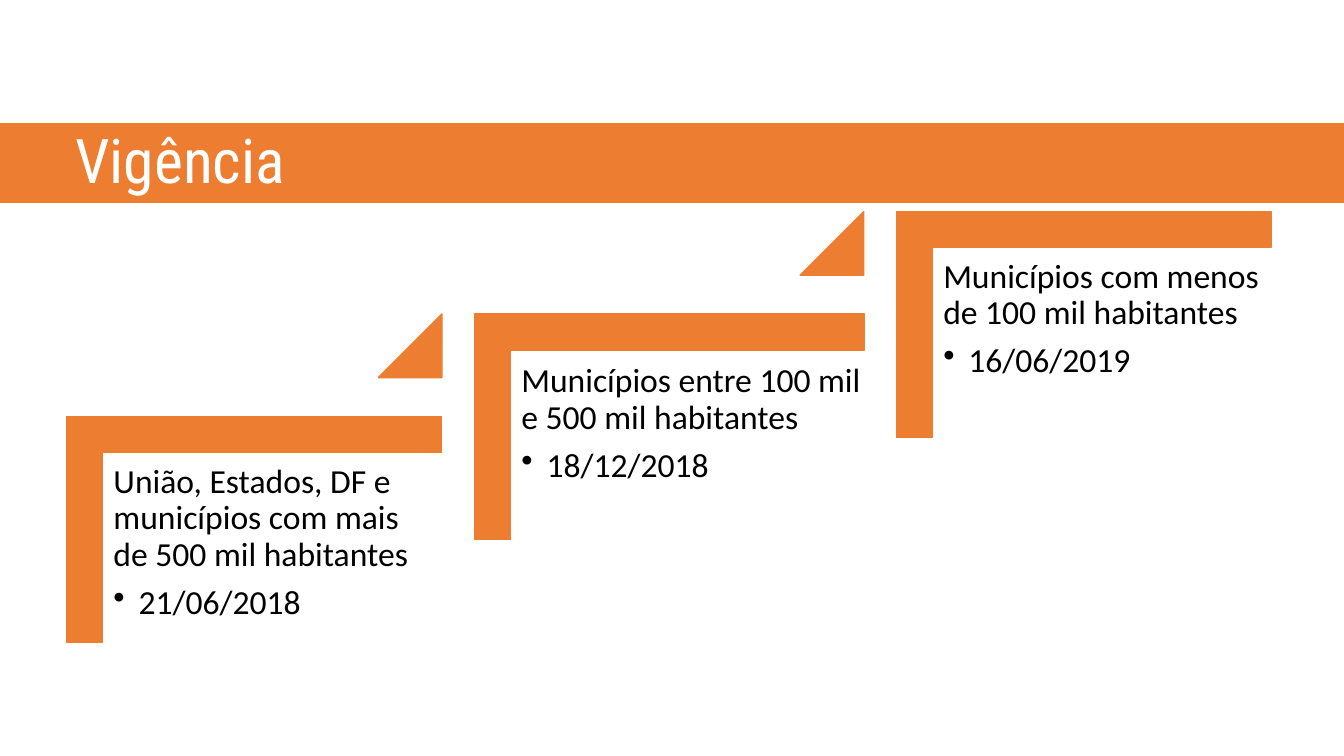
from lxml import etree
from pptx import Presentation
from pptx import util as u
from pptx.dml import color
from pptx.enum import shapes, text
from pptx.oxml import ns

ORANGE, WHITE, BLACK = "ED7D31", "FFFFFF", "000000"
STEP_HEIGHT, STEP_RISE, LAST_TOP = 161.3, 73.1, 151.2
STEPS = [
    (47.5, 267.8, 324.7, 241.9,
     "União, Estados, DF e municípios com mais de 500 mil habitantes", "21/06/2018"),
    (338.8, 278.6, 252.7, 257.8,
     "Municípios entre 100 mil e 500 mil habitantes", "18/12/2018"),
    (640.2, 267.8, 177.8, 241.9,
     "Municípios com menos de 100 mil habitantes", "16/06/2019"),
]


def rgb(value):
    return color.RGBColor.from_string(value)


def apply(target, values):
    for name, value in values.items():
        setattr(target, name, value)


class SlideBuilder:
    def __init__(self, page):
        self.page = page
        self.title_style = {"size": u.Pt(44), "name": "Roboto Condensed"}
        self.body_style = {"size": u.Pt(24), "name": "Calibri"}

    def shape(self, kind, left, top, width, height, line=ORANGE, adjustments=(), rotation=0):
        box = self.page.shapes.add_shape(kind, *map(u.Pt, (left, top, width, height)))
        box.shadow.inherit = False
        box.rotation = rotation
        for index, value in enumerate(adjustments):
            box.adjustments[index] = value
        box.fill.solid()
        box.fill.fore_color.rgb = rgb(ORANGE)
        box.line.color.rgb = rgb(line)
        box.line.width = u.Pt(1)

    def corner(self, left, top, width, height):
        shift = (width - height) / 2
        self.shape(shapes.MSO_SHAPE.CORNER, left + shift, top - shift, height, width,
                   adjustments=(0.16, 0.16), rotation=90)

    def text_box(self, left, top, width, height, **frame_format):
        box = self.page.shapes.add_textbox(*map(u.Pt, (left, top, width, height)))
        apply(box.text_frame, {"word_wrap": True, **frame_format})
        return box.text_frame

    def fill_para(self, para, words, style, ink, after=0, bullet=False):
        if bullet:
            properties = para._p.get_or_add_pPr()
            properties.set("marL", str(u.Pt(18)))
            properties.set("indent", str(u.Pt(-18)))
            mark = etree.SubElement(properties, ns.qn("a:buChar"))
            mark.set("char", "•")
        apply(para, {"line_spacing": 0.9, "space_after": u.Pt(after), "level": int(bullet)})
        span = para.add_run()
        span.text = words
        apply(span.font, style)
        span.font.color.rgb = rgb(ink)

    def title(self, words):
        self.shape(shapes.MSO_SHAPE.RECTANGLE, -21.6, 87.1, 999.4, 58.3, line=WHITE)
        frame = self.text_box(46.8, 64.8, 828, 104.4,
                              vertical_anchor=text.MSO_ANCHOR.MIDDLE)
        self.fill_para(frame.paragraphs[0], words, self.title_style, WHITE)

    def step_text(self, left, top, width, who, date):
        inset = u.Pt(7.2)
        frame = self.text_box(left, top, width, 212.4, margin_top=inset, margin_bottom=inset)
        self.fill_para(frame.paragraphs[0], who, self.body_style, BLACK, after=8.4)
        self.fill_para(frame.add_paragraph(), date, self.body_style, BLACK, after=3.6,
                       bullet=True)


def main():
    deck = Presentation()
    apply(deck, {"slide_width": u.Pt(960), "slide_height": u.Pt(540)})
    builder = SlideBuilder(deck.slides.add_slide(deck.slide_layouts[6]))
    for index, (left, width, text_top, text_width, who, date) in enumerate(STEPS):
        top = LAST_TOP + STEP_RISE * (len(STEPS) - 1 - index)
        if index:
            builder.shape(shapes.MSO_SHAPE.ISOSCELES_TRIANGLE, left - 68.6, top, 45.4, 45.4,
                          adjustments=(1,))
        builder.corner(left, top, width, STEP_HEIGHT)
        builder.step_text(left + 26.5, text_top, text_width, who, date)
    builder.title("Vigência")
    deck.save("out.pptx")


if __name__ == "__main__":
    main()
